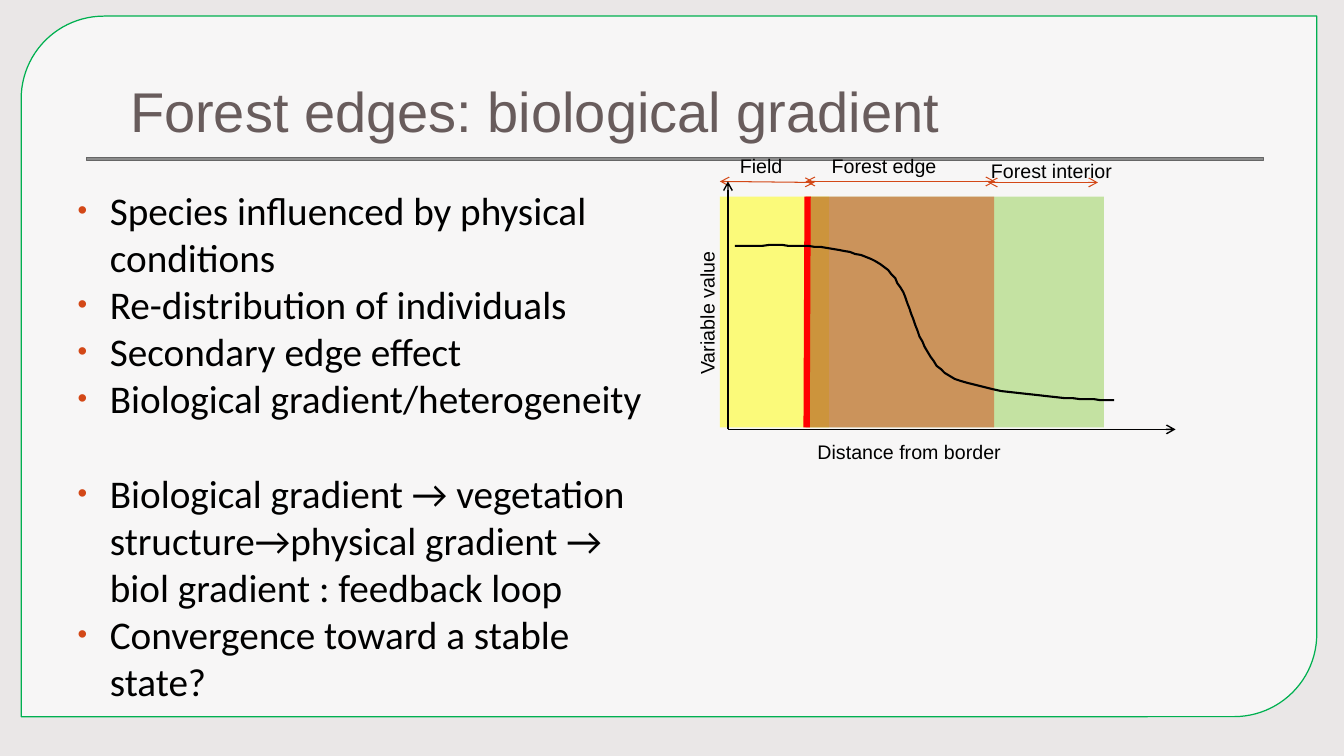
from lxml.etree import SubElement
from pptx import Presentation
from pptx.dml.color import RGBColor
from pptx.enum.shapes import MSO_CONNECTOR, MSO_SHAPE
from pptx.enum.text import MSO_ANCHOR, MSO_AUTO_SIZE, PP_ALIGN
from pptx.oxml.ns import qn
from pptx.util import Pt

PX = 9144
COLORS = {
    "backdrop": "EAE7E7", "panel": "FFFFFF", "frame": "00B050",
    "rule": "8C8C8C", "rule_edge": "666666", "title": "685C5C",
    "ink": "000000", "accent": "D34817", "field": "FFFF00",
    "forest": "92D050", "border": "FF0000",
}


def emu(*lengths):
    return [length * PX for length in lengths]


def rgb(name):
    return RGBColor.from_string(COLORS[name])


def assign(target, values):
    for name, value in values.items():
        setattr(target, name, value)


def add_xml(parent, tag, **attributes):
    return SubElement(parent, qn(tag), attributes)


class EdgeSlide:
    """Holds the text style and the page, and draws each kind of element on it."""

    def __init__(self, page):
        self.page = page
        self.label_font = {"name": "Arial", "size": Pt(14)}
        self.title_font = {"name": "Arial", "size": Pt(40)}
        self.list_font = {"name": "Calibri", "size": Pt(28)}
        page.background.fill.solid()
        page.background.fill.fore_color.rgb = rgb("backdrop")

    def add_text(self, para, text, font, color):
        span = para.add_run()
        span.text = text
        assign(span.font, font)
        span.font.color.rgb = rgb(color)

    def place(self, shape, *box):
        assign(shape, dict(zip(("left", "top", "width", "height"), emu(*box))))
        self.page.shapes._spTree.append(shape._element)

    def outline(self, shape, color, width):
        shape.line.color.rgb = rgb(color)
        shape.line.width = Pt(width)

    def block(self, box, fill, opacity=100, kind=MSO_SHAPE.RECTANGLE, line=None):
        shape = self.page.shapes.add_shape(kind, *emu(*box))
        shape.shadow.inherit = False
        shape.fill.solid()
        shape.fill.fore_color.rgb = rgb(fill)
        color = shape._element.spPr.find(f"{qn('a:solidFill')}/{qn('a:srgbClr')}")
        add_xml(color, "a:alpha", val=str(opacity * 1000))
        if line:
            self.outline(shape, *line)
        else:
            shape.line.fill.background()
        return shape

    def title(self, text, box):
        shape = self.page.shapes.title
        self.place(shape, *box)
        assign(shape.text_frame, {"vertical_anchor": MSO_ANCHOR.BOTTOM,
                                  "auto_size": MSO_AUTO_SIZE.NONE})
        para = shape.text_frame.paragraphs[0]
        para.alignment = PP_ALIGN.LEFT
        para._p.get_or_add_pPr().set("marL", str(6 * PX))
        self.add_text(para, text, self.title_font, "title")

    def bullets(self, items, box):
        shape = self.page.placeholders[1]
        self.place(shape, *box)
        frame = shape.text_frame
        frame.auto_size = MSO_AUTO_SIZE.NONE
        for index, (text, gap) in enumerate(items):
            para = frame.add_paragraph() if index else frame.paragraphs[0]
            properties = para._p.get_or_add_pPr()
            properties.set("marL", str(32 * PX))
            properties.set("indent", str(-32 * PX))
            bullet_color = add_xml(properties, "a:buClr")
            add_xml(bullet_color, "a:srgbClr", val=COLORS["accent"])
            add_xml(properties, "a:buSzPct", val="70000")
            add_xml(properties, "a:buFont", typeface="Arial")
            add_xml(properties, "a:buChar", char="•")
            assign(para, {"space_before": Pt(gap), "space_after": Pt(0),
                          "line_spacing": 1.0})
            self.add_text(para, text, self.list_font, "ink")

    def label(self, text, box, wrap=True, rotation=0):
        shape = self.page.shapes.add_textbox(*emu(*box))
        shape.rotation = rotation
        assign(shape.text_frame, {"word_wrap": wrap,
                                  "auto_size": MSO_AUTO_SIZE.SHAPE_TO_FIT_TEXT})
        self.add_text(shape.text_frame.paragraphs[0], text, self.label_font, "ink")

    def line(self, ends, color, width, heads=()):
        shape = self.page.shapes.add_connector(MSO_CONNECTOR.STRAIGHT, *emu(*ends))
        self.outline(shape, color, width)
        stroke = shape._element.spPr.find(qn("a:ln"))
        for head in heads:
            add_xml(stroke, head, type="arrow")
        add_xml(shape._element.spPr, "a:effectLst")

    def curve(self, start, segments, color, width, steps=24):
        points = []
        begin = start
        for segment in segments:
            for step in range(1, steps + 1):
                t = step / steps
                weights = ((1 - t) ** 3, 3 * t * (1 - t) ** 2, 3 * t * t * (1 - t), t ** 3)
                points.append(tuple(
                    sum(weight * value for weight, value in zip(weights, axis))
                    for axis in zip(begin, *segment)))
            begin = segment[-1]
        builder = self.page.shapes.build_freeform(*start, scale=PX)
        builder.add_line_segments(points, close=False)
        shape = builder.convert_to_shape()
        shape.shadow.inherit = False
        shape.fill.background()
        self.outline(shape, color, width)


def main():
    deck = Presentation()
    deck.slide_width, deck.slide_height = emu(1333, 750)
    slide = EdgeSlide(deck.slides.add_slide(deck.slide_layouts[1]))

    panel = slide.block((21, 16, 1285, 695), "panel", 65,
                        MSO_SHAPE.ROUND_2_DIAG_RECTANGLE, ("frame", 0.87))
    panel.adjustments[0], panel.adjustments[1] = 0.118, 0
    slide.block((86, 156, 1167, 3), "rule", line=("rule_edge", 0.5))
    slide.title("Forest edges: biological gradient", (113, 23, 1200, 125))
    slide.bullets([
        ("Species influenced by physical conditions", 0),
        ("Re-distribution of individuals", 0),
        ("Secondary edge effect", 0),
        ("Biological gradient/heterogeneity", 0),
        ("Biological gradient → vegetation structure→physical gradient → "
         "biol gradient : feedback loop", 34),
        ("Convergence toward a stable state?", 0),
    ], (67, 180, 589, 495))

    zone_top, zone_height = 195, 229
    for left, width, color, opacity in (
            (714, 108, "field", 50), (799, 296, "forest", 50), (799, 187, "accent", 51)):
        slide.block((left, zone_top, width, zone_height), color, opacity)
    slide.line((801, zone_top, 800, zone_top + zone_height), "border", 4.5)

    both, end = ("a:headEnd", "a:tailEnd"), ("a:tailEnd",)
    for ends in ((714, 180, 808, 181), (799, 180, 987, 180), (980, 181, 1089, 181)):
        slide.line(ends, "accent", 0.75, both)
    for tip in ((1166, 426), (722, 180)):
        slide.line((722, 426, *tip), "ink", 1, end)

    slide.curve((729, 244), [
        ((783, 243), (837, 241), (873, 262)),
        ((908, 284), (903, 350), (942, 373)),
        ((981, 395), (1105, 397), (1105, 397)),
    ], "ink", 1.5)

    slide.label("Distance from border", (801, 432, 203, 34), wrap=False)
    slide.label("Variable value", (630, 293, 143, 34), wrap=False, rotation=270)
    slide.label("Field", (724, 148, 84, 34))
    slide.label("Forest edge", (815, 148, 158, 34))
    slide.label("Forest interior", (973, 153, 193, 34))
    deck.save("out.pptx")


if __name__ == "__main__":
    main()
